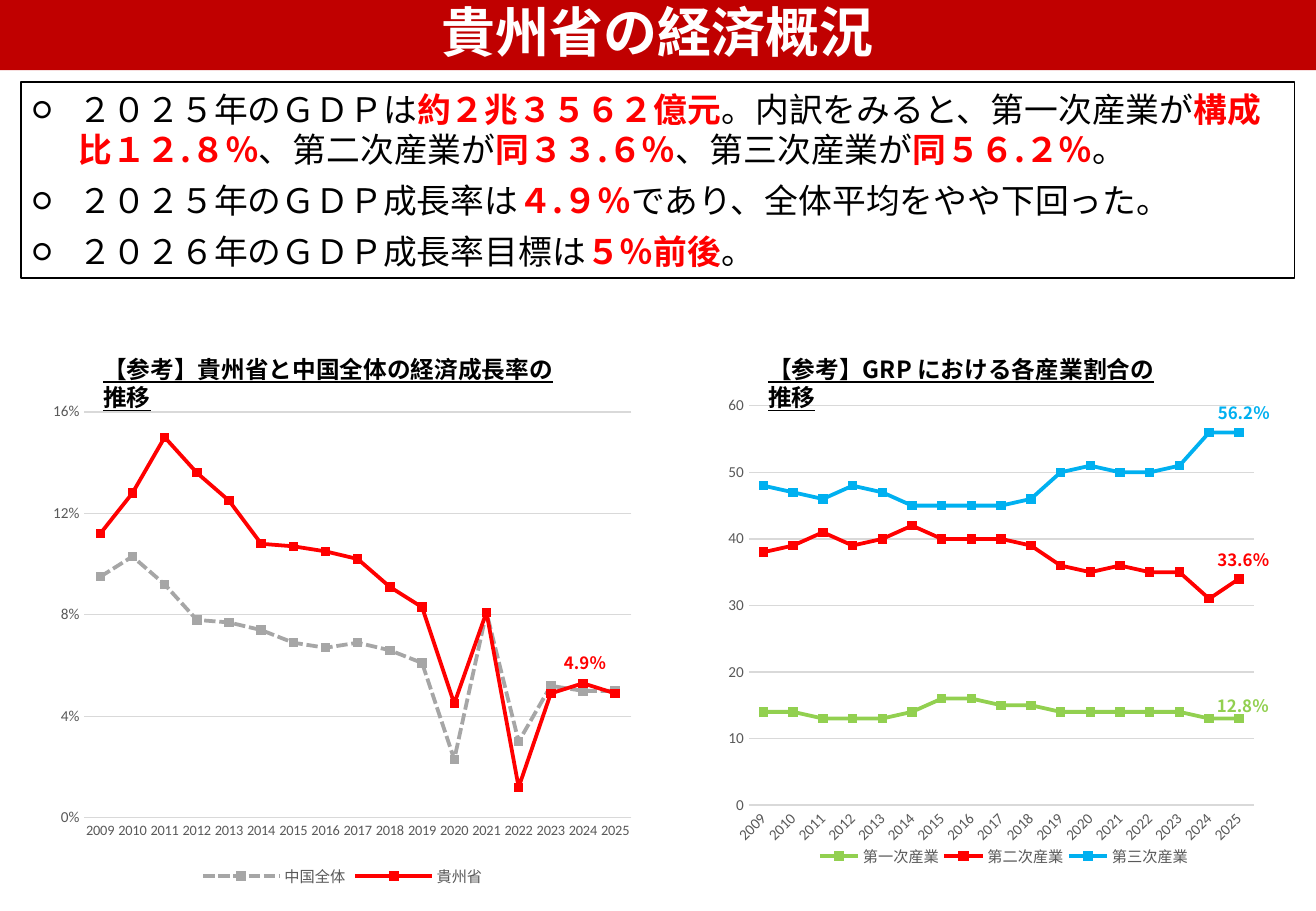
import pptx
import pptx.chart.data
import pptx.dml.color
import pptx.enum.chart
import pptx.enum.dml
import pptx.enum.shapes
import pptx.enum.text
import pptx.oxml
import pptx.oxml.ns
import pptx.util

Cm = pptx.util.Cm
Pt = pptx.util.Pt
RGBColor = pptx.dml.color.RGBColor

BLACK = RGBColor(0x00, 0x00, 0x00)
WHITE = RGBColor(0xFF, 0xFF, 0xFF)
BANNER_RED = RGBColor(0xC0, 0x00, 0x00)
RED = RGBColor(0xFF, 0x00, 0x00)
GREEN = RGBColor(0x92, 0xD0, 0x50)
BLUE = RGBColor(0x00, 0xB0, 0xF0)
GREY = RGBColor(0xA6, 0xA6, 0xA6)
AXIS_TEXT = RGBColor(0x59, 0x59, 0x59)
GRID = RGBColor(0xD9, 0xD9, 0xD9)

TEXT_FONT = "Noto Sans CJK JP"
CHART_FONT = "Calibri"

# Content: positions are left, top, width, height in centimetres.
TITLE = "貴州省の経済概況"
# Every second piece of a line is emphasised.
SUMMARY = [
    ["２０２５年のＧＤＰは", "約２兆３５６２億元", "。内訳をみると、第一次産業が",
     "構成比１２.８％", "、第二次産業が", "同３３.６％", "、第三次産業が", "同５６.２％", "。"],
    ["２０２５年のＧＤＰ成長率は", "４.９％", "であり、全体平均をやや下回った。"],
    ["２０２６年のＧＤＰ成長率目標は", "５％前後", "。"],
]
YEARS = [str(year) for year in range(2009, 2026)]
# Plot and legend areas are x, y, width, height as fractions of the chart.
CHARTS = [
    {
        "position": (14.96, 8.17, 11.48, 10.57),
        "plot": (0.06, 0.03, 0.92, 0.79), "legend": (0.18, 0.89, 0.69, 0.06),
        "maximum": 60, "step": 10, "format": "0", "label_angle": -45, "year_size": 9,
        "series": [
            ("第一次産業", GREEN, False,
             [14, 14, 13, 13, 13, 14, 16, 16, 15, 15, 14, 14, 14, 14, 14, 13, 13]),
            ("第二次産業", RED, False,
             [38, 39, 41, 39, 40, 42, 40, 40, 40, 39, 36, 35, 36, 35, 35, 31, 34]),
            ("第三次産業", BLUE, False,
             [48, 47, 46, 48, 47, 45, 45, 45, 45, 46, 50, 51, 50, 50, 51, 56, 56]),
        ],
    },
    {
        "position": (0.88, 8.25, 12.57, 10.39),
        "plot": (0.07, 0.035, 0.91, 0.817), "legend": None,
        "maximum": 0.16, "step": 0.04, "format": "0%", "label_angle": 0, "year_size": 8.5,
        "series": [
            ("中国全体", GREY, True,
             [0.095, 0.103, 0.092, 0.078, 0.077, 0.074, 0.069, 0.067, 0.069,
              0.066, 0.061, 0.023, 0.081, 0.03, 0.052, 0.05, 0.05]),
            ("貴州省", RED, False,
             [0.112, 0.128, 0.15, 0.136, 0.125, 0.108, 0.107, 0.105, 0.102,
              0.091, 0.083, 0.045, 0.081, 0.012, 0.049, 0.053, 0.049]),
        ],
    },
]
CHART_TITLES = [
    ("【参考】貴州省と中国全体の経済成長率の推移", (1.91, 7.29, 10.26, 0.86)),
    ("【参考】GRP における各産業割合の推移", (15.81, 7.29, 8.89, 0.86)),
]
VALUE_LABELS = [
    ("4.9％", RED, (11.54, 13.52, 1.85, 0.69)),
    ("56.2％", BLUE, (25.21, 8.29, 1.7, 0.69)),
    ("33.6％", RED, (25.2, 11.36, 1.85, 0.69)),
    ("12.8％", GREEN, (25.19, 14.43, 1.88, 0.69)),
]


def lengths(position):
    return [Cm(value) for value in position]


def format_run(run, size, color, bold=False, underline=False):
    run.font.size = Pt(size)
    run.font.color.rgb = color
    run.font.bold = bold
    run.font.underline = underline
    run.font.name = TEXT_FONT
    east_asian = pptx.oxml.parse_xml(
        f'<a:ea {pptx.oxml.ns.nsdecls("a")} typeface="{TEXT_FONT}"/>')
    run.font._element.find(pptx.oxml.ns.qn("a:latin")).addnext(east_asian)


def add_label(slide, text, position, size, color, underline=False):
    text_frame = slide.shapes.add_textbox(*lengths(position)).text_frame
    text_frame.word_wrap = True
    text_frame.text = text
    format_run(text_frame.paragraphs[0].runs[0], size, color, True, underline)


def add_title(slide):
    title = slide.shapes.title
    title.left, title.top, title.width, title.height = lengths((0, -0.16, 27.51, 1.63))
    title.fill.solid()
    title.fill.fore_color.rgb = BANNER_RED
    title.text_frame.text = TITLE
    title.text_frame.vertical_anchor = pptx.enum.text.MSO_ANCHOR.MIDDLE
    paragraph = title.text_frame.paragraphs[0]
    paragraph.alignment = pptx.enum.text.PP_ALIGN.CENTER
    format_run(paragraph.runs[0], 32, WHITE, bold=True)


def add_summary(slide):
    box = slide.shapes.add_shape(
        pptx.enum.shapes.MSO_SHAPE.RECTANGLE, *lengths((0.44, 1.71, 26.62, 4.1)))
    box.shadow.inherit = False
    box.fill.solid()
    box.fill.fore_color.rgb = WHITE
    box.line.color.rgb = BLACK
    box.line.width = Pt(1)
    text_frame = box.text_frame
    text_frame.word_wrap = True
    text_frame.vertical_anchor = pptx.enum.text.MSO_ANCHOR.MIDDLE
    for index, pieces in enumerate(SUMMARY):
        paragraph = text_frame.add_paragraph() if index else text_frame.paragraphs[0]
        paragraph.alignment = pptx.enum.text.PP_ALIGN.LEFT
        paragraph.space_after = Pt(6)
        for number, piece in enumerate(pieces):
            emphasised = number % 2 == 1
            run = paragraph.add_run()
            run.text = piece
            format_run(run, 20, RED if emphasised else BLACK, emphasised)
        properties = paragraph._p.get_or_add_pPr()
        properties.set("marL", str(Cm(0.96)))
        properties.set("indent", str(-Cm(0.96)))
        for tag in (f'buFont {{}} typeface="{CHART_FONT}"', 'buChar {} char="○"'):
            namespace = pptx.oxml.ns.nsdecls("a")
            properties.append(pptx.oxml.parse_xml(f"<a:{tag.format(namespace)}/>"))


def format_font(font, size, color):
    font.name = CHART_FONT
    font.size = Pt(size)
    font.color.rgb = color


def format_axes(chart, details):
    years, values = chart.category_axis, chart.value_axis
    for axis, size in ((years, details["year_size"]), (values, 9)):
        axis.major_tick_mark = pptx.enum.chart.XL_TICK_MARK.NONE
        axis.minor_tick_mark = pptx.enum.chart.XL_TICK_MARK.NONE
        format_font(axis.tick_labels.font, size, AXIS_TEXT)
    years.format.line.color.rgb = GRID
    years.format.line.width = Pt(0.75)
    body = years._element.find(pptx.oxml.ns.qn("c:txPr")).find(pptx.oxml.ns.qn("a:bodyPr"))
    body.set("rot", str(details["label_angle"] * 60000))
    values.format.line.fill.background()
    values.minimum_scale = 0
    values.maximum_scale = details["maximum"]
    values.major_unit = details["step"]
    values.tick_labels.number_format = details["format"]
    values.tick_labels.number_format_is_linked = False
    values.major_gridlines.format.line.color.rgb = GRID
    values.major_gridlines.format.line.width = Pt(0.75)


def set_layout(parent, position, area, target=""):
    """Fix where a chart part lies, as its child number position."""
    sizes = "".join(f'<c:{tag} val="{value}"/>' for tag, value in zip("xywh", area))
    layout = pptx.oxml.parse_xml(
        f'<c:layout {pptx.oxml.ns.nsdecls("c")}><c:manualLayout>{target}'
        f'<c:xMode val="edge"/><c:yMode val="edge"/>{sizes}</c:manualLayout></c:layout>')
    for old in parent.findall(pptx.oxml.ns.qn("c:layout")):
        parent.remove(old)
    parent.insert(position, layout)


def add_line_chart(slide, details):
    data = pptx.chart.data.CategoryChartData(number_format=details["format"])
    data.categories = YEARS
    for name, _, _, values in details["series"]:
        data.add_series(name, values)
    chart = slide.shapes.add_chart(
        pptx.enum.chart.XL_CHART_TYPE.LINE_MARKERS, *lengths(details["position"]), data).chart
    format_font(chart.font, 10, BLACK)
    chart.has_title = False
    chart.has_legend = True
    chart.legend.position = pptx.enum.chart.XL_LEGEND_POSITION.BOTTOM
    chart.legend.include_in_layout = False
    format_font(chart.legend.font, 9, AXIS_TEXT)
    chart.plots[0].vary_by_categories = False
    format_axes(chart, details)
    set_layout(chart._chartSpace.chart.plotArea, 0, details["plot"],
               '<c:layoutTarget val="inner"/>')
    if details["legend"]:
        set_layout(chart.legend._element, 1, details["legend"])
    for series, (_, color, dashed, _) in zip(chart.plots[0].series, details["series"]):
        series.smooth = False
        series.format.line.color.rgb = color
        series.format.line.width = Pt(2.25)
        if dashed:
            series.format.line.dash_style = pptx.enum.dml.MSO_LINE.SQUARE_DOT
        series.marker.style = pptx.enum.chart.XL_MARKER_STYLE.SQUARE
        series.marker.size = 5
        series.marker.format.fill.solid()
        series.marker.format.fill.fore_color.rgb = color
        series.marker.format.line.color.rgb = color


presentation = pptx.Presentation()
presentation.slide_width, presentation.slide_height = Cm(27.51), Cm(19.05)
slide = presentation.slides.add_slide(presentation.slide_layouts[5])
for details in CHARTS:
    add_line_chart(slide, details)
add_title(slide)
add_summary(slide)
for text, position in CHART_TITLES:
    add_label(slide, text, position, 14, BLACK, underline=True)
for text, color, position in VALUE_LABELS:
    add_label(slide, text, position, 10, color)
presentation.save("out.pptx")
